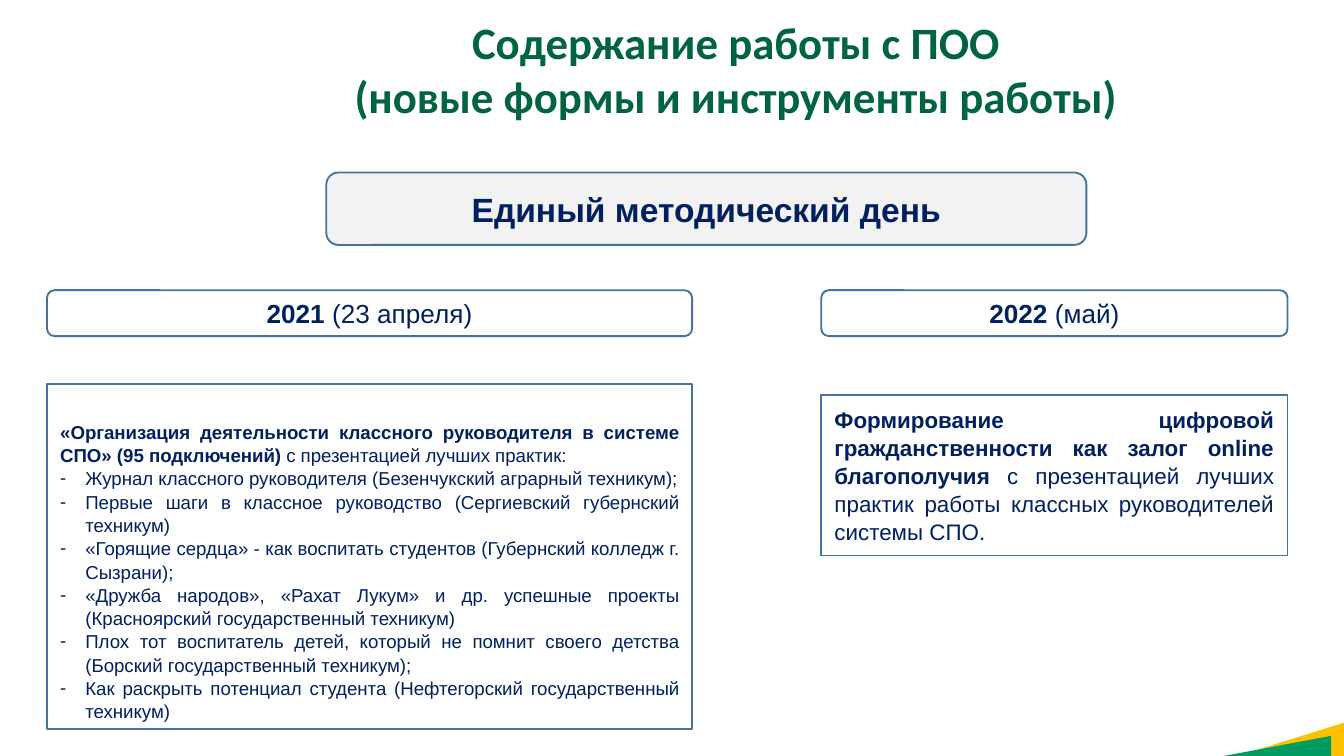
from pptx import Presentation
from pptx.dml.color import RGBColor
from pptx.enum import shapes, text
from pptx.oxml import parse_xml
from pptx.oxml.ns import nsdecls
from pptx.util import Pt

NAVY, GREEN, BORDER, WHITE = "002060", "006440", "43739E", "FFFFFF"
LEFT_X, LEFT_W = 25.2, 345.6
RIGHT_X, RIGHT_W = 440, 249.8
ALIGN = text.PP_ALIGN
ANCHOR = text.MSO_ANCHOR
KIND = shapes.MSO_SHAPE

PRACTICES = [
    "Журнал классного руководителя (Безенчукский аграрный техникум);",
    "Первые шаги в классное руководство (Сергиевский губернский техникум)",
    "«Горящие сердца» - как воспитать студентов (Губернский колледж г. Сызрани);",
    "«Дружба народов», «Рахат Лукум» и др. успешные проекты "
    "(Красноярский государственный техникум)",
    "Плох тот воспитатель детей, который не помнит своего детства "
    "(Борский государственный техникум);",
    "Как раскрыть потенциал студента (Нефтегорский государственный техникум)",
]


def rgb(value):
    return RGBColor.from_string(value)


def add_dash(p, indent=13.5):
    """Give a paragraph a dash bullet with a hanging indent."""
    pPr = p._p.get_or_add_pPr()
    pPr.set("marL", str(Pt(indent)))
    pPr.set("indent", str(-Pt(indent)))
    pPr.append(parse_xml(f'<a:buFont {nsdecls("a")} typeface="Arial"/>'))
    pPr.append(parse_xml(f'<a:buChar {nsdecls("a")} char="-"/>'))


def write(sp, paragraphs, size, font="Arial", color=NAVY, align=ALIGN.CENTER,
          anchor=ANCHOR.MIDDLE, spacing=None, dashed_from=None):
    """Fill a shape; each paragraph is a (bold text, regular text) pair."""
    tf = sp.text_frame
    tf.word_wrap = True
    tf.vertical_anchor = anchor
    for i, parts in enumerate(paragraphs):
        p = tf.paragraphs[0] if i == 0 else tf.add_paragraph()
        p.alignment = align
        if spacing:
            p.line_spacing = spacing
        if dashed_from is not None and i >= dashed_from:
            add_dash(p)
        for content, bold in zip(parts, (True, False)):
            if content:
                r = p.add_run()
                r.text = content
                r.font.name, r.font.size, r.font.bold = font, Pt(size), bold
                r.font.color.rgb = rgb(color)


def add_box(s, kind, x, y, w, h, fill=WHITE, line=BORDER, rotation=0):
    sp = s.shapes.add_shape(kind, Pt(x), Pt(y), Pt(w), Pt(h))
    sp.shadow.inherit = False
    sp.rotation = rotation
    sp.fill.solid()
    sp.fill.fore_color.rgb = rgb(fill)
    if line:
        sp.line.color.rgb = rgb(line)
        sp.line.width = Pt(1)
    else:
        sp.line.fill.background()
    return sp


def add_corner(s):
    for x, y, w, h, fill in ((681.1, 366.5, 18.7, 59.8, "FFC000"),
                             (679, 370.8, 10.8, 57.6, "009B62")):
        add_box(s, KIND.RIGHT_TRIANGLE, x, y, w, h, fill, None, 270)


def add_title(s, *lines):
    sp = s.shapes.add_textbox(Pt(76.3), Pt(4.3), Pt(635.8), Pt(65.5))
    write(sp, [(line, "") for line in lines], 24, "Calibri", GREEN,
          anchor=ANCHOR.TOP)


def main():
    prs = Presentation()
    prs.slide_width, prs.slide_height = Pt(720), Pt(405)
    s = prs.slides.add_slide(prs.slide_layouts[6])
    add_corner(s)

    heading = add_box(s, KIND.ROUNDED_RECTANGLE, 174.8, 92.4, 407.2, 38.8, "F2F2F2")
    write(heading, [("Единый методический день", "")], 18)

    for x, w, year, date in ((LEFT_X, LEFT_W, "2021 ", "(23 апреля)"),
                             (RIGHT_X, RIGHT_W, "2022 ", "(май)")):
        write(add_box(s, KIND.ROUNDED_RECTANGLE, x, 155.5, w, 24.6), [(year, date)], 14)

    practices = add_box(s, KIND.RECTANGLE, LEFT_X, 205.8, LEFT_W, 184.8)
    intro = ("«Организация деятельности классного руководителя в системе СПО» "
             "(95 подключений) ", "с презентацией лучших практик:")
    write(practices, [intro] + [("", item) for item in PRACTICES], 10,
          align=ALIGN.JUSTIFY, anchor=ANCHOR.BOTTOM, spacing=1.04, dashed_from=1)

    topic = add_box(s, KIND.RECTANGLE, RIGHT_X, 211.4, RIGHT_W, 86.2)
    write(topic, [("Формирование цифровой гражданственности как залог online "
                   "благополучия ",
                   "с презентацией лучших практик работы классных руководителей "
                   "системы СПО.")], 12, align=ALIGN.JUSTIFY, spacing=1.04)

    add_title(s, "Содержание работы с ПОО", "(новые формы и инструменты работы)")
    prs.save("out.pptx")


if __name__ == "__main__":
    main()
